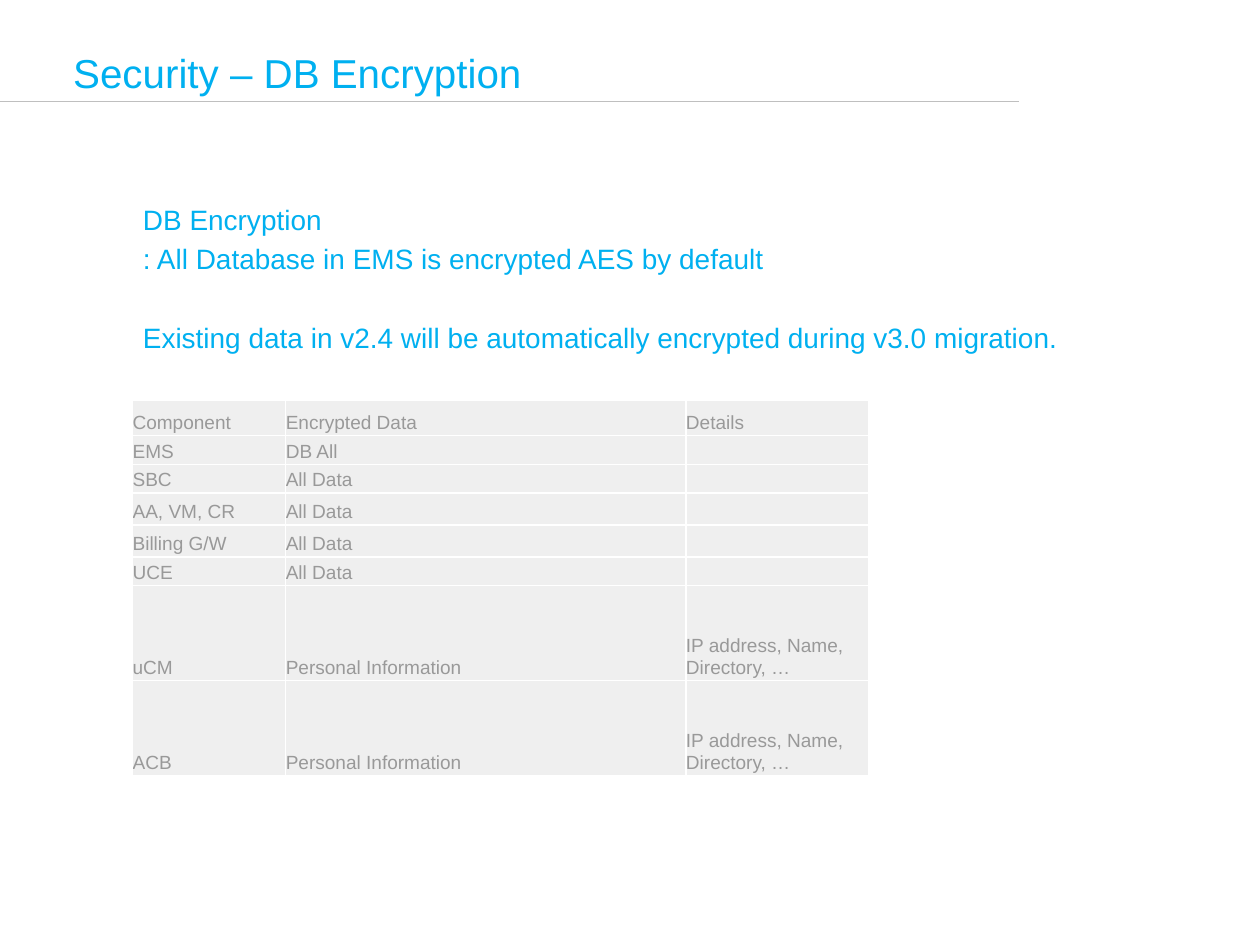
from lxml.etree import SubElement
from pptx import Presentation
from pptx.dml.color import RGBColor
from pptx.enum.shapes import MSO_CONNECTOR as Link
from pptx.enum.text import MSO_ANCHOR as Anchor, MSO_AUTO_SIZE as Fit, PP_ALIGN as Align
from pptx.oxml.ns import qn
from pptx.util import Inches, Pt

# Content
TITLE = "Security – DB Encryption"
NOTES = [  # text, space before in points
    ("DB Encryption", 0),
    (": All Database in EMS is encrypted AES by default", 3.5),
    ("Existing data in v2.4 will be automatically encrypted during v3.0 migration.", 28.4),
]
PERSON = ("Personal Information", "IP address, Name, Directory, …")
ROWS = [  # height, cells
    (0.31, ("Component", "Encrypted Data", "Details")),
    (0.25, ("EMS", "DB All", "")),
    (0.25, ("SBC", "All Data", "")),
    (0.28, ("AA, VM, CR", "All Data", "")),
    (0.28, ("Billing G/W", "All Data", "")),
    (0.25, ("UCE", "All Data", "")),
    (0.83, ("uCM", *PERSON)),
    (0.83, ("ACB", *PERSON)),
]
COLS = (1.34, 3.5, 1.6)
WIDE, HIGH = 11.02, 8.27
LEFT = 1.16
BLUE, GREY, PALE, WHITE, RULE = "00B0F0", "999999", "EFEFEF", "FFFFFF", "BFBFBF"


def color(code):
    return RGBColor.from_string(code)


def write(para, text, size, code, before=0):
    """Fill one paragraph with plain left-aligned text."""
    props = para._p.get_or_add_pPr()
    props.set("marL", "0")
    props.set("indent", "0")
    SubElement(props, qn("a:buNone"))
    para.alignment = Align.LEFT
    para.space_before = Pt(before)
    if text:
        run = para.add_run()
        run.text = text
        run.font.name = "Arial"
        run.font.size = Pt(size)
        run.font.color.rgb = color(code)
    else:
        SubElement(para._p, qn("a:endParaRPr")).set("sz", str(size * 100))


def place(shape, *box):
    shape.left, shape.top, shape.width, shape.height = map(Inches, box)


def frame(shape, anchor):
    area = shape.text_frame
    area.auto_size = Fit.NONE
    area.word_wrap = True
    area.vertical_anchor = anchor
    area.margin_left = area.margin_right = Inches(0.09)
    area.margin_top = area.margin_bottom = Inches(0.05)
    return area


def edge(cell):
    """Give a cell white borders."""
    props = cell._tc.get_or_add_tcPr()
    for side in "LRTB":
        line = SubElement(props, qn(f"a:ln{side}"), w=str(Pt(1)))
        fill = SubElement(line, qn("a:solidFill"))
        SubElement(fill, qn("a:srgbClr"), val=WHITE)


def main():
    deck = Presentation()
    deck.slide_width, deck.slide_height = Inches(WIDE), Inches(HIGH)
    slide = deck.slides.add_slide(deck.slide_layouts[1])

    # Rule under the title
    y = Inches(0.89)
    rule = slide.shapes.add_connector(Link.STRAIGHT, 0, y, Inches(8.91), y)
    rule.line.color.rgb = color(RULE)
    rule.line.width = Pt(0.75)
    SubElement(rule._element.spPr, qn("a:effectLst"))

    # Title
    head = slide.shapes.title
    place(head, 0.55, 0.34, 9.87, 0.59)
    write(frame(head, Anchor.MIDDLE).paragraphs[0], TITLE, 25.4, BLUE)

    # Body
    body = slide.placeholders[1]
    place(body, LEFT, 1.72, 8.6, 4.7)
    area = frame(body, Anchor.TOP)
    for i, (text, gap) in enumerate(NOTES):
        para = area.add_paragraph() if i else area.paragraphs[0]
        write(para, text, 17.6, BLUE, before=gap)

    # Table
    size = sum(COLS), sum(high for high, _ in ROWS)
    box = map(Inches, (LEFT, 3.5, *size))
    table = slide.shapes.add_table(len(ROWS), len(COLS), *box).table
    table.first_row = table.horz_banding = False
    for col, wide in zip(table.columns, COLS):
        col.width = Inches(wide)
    for row, (high, texts) in zip(table.rows, ROWS):
        row.height = Inches(high)
        for cell, text in zip(row.cells, texts):
            edge(cell)
            cell.fill.solid()
            cell.fill.fore_color.rgb = color(PALE)
            cell.vertical_anchor = Anchor.BOTTOM
            cell.margin_left = cell.margin_right = cell.margin_top = 0
            # Keeps descenders clear of the border
            cell.margin_bottom = Inches(0.02)
            write(cell.text_frame.paragraphs[0], text, 12, GREY)

    deck.save("out.pptx")


if __name__ == "__main__":
    main()
